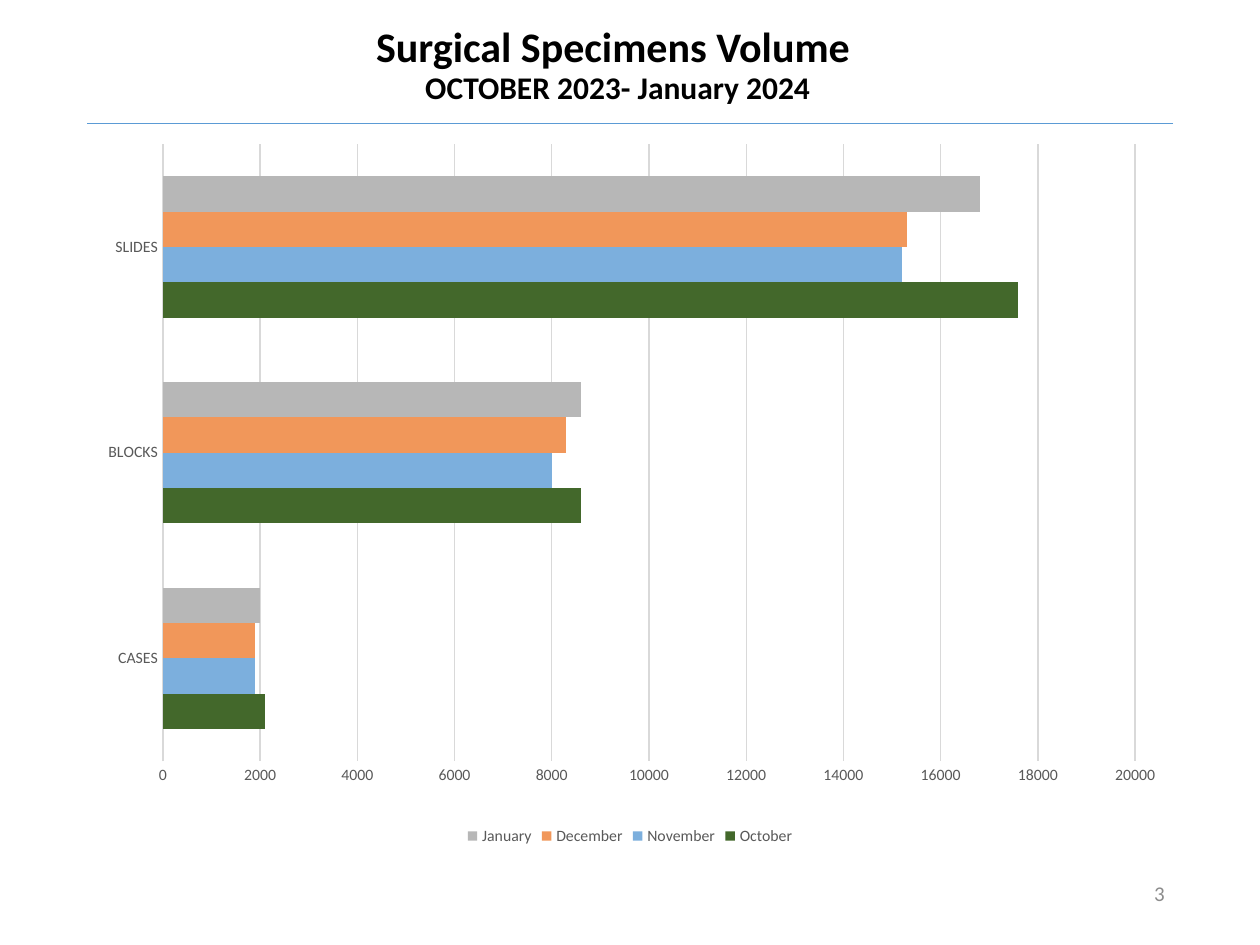
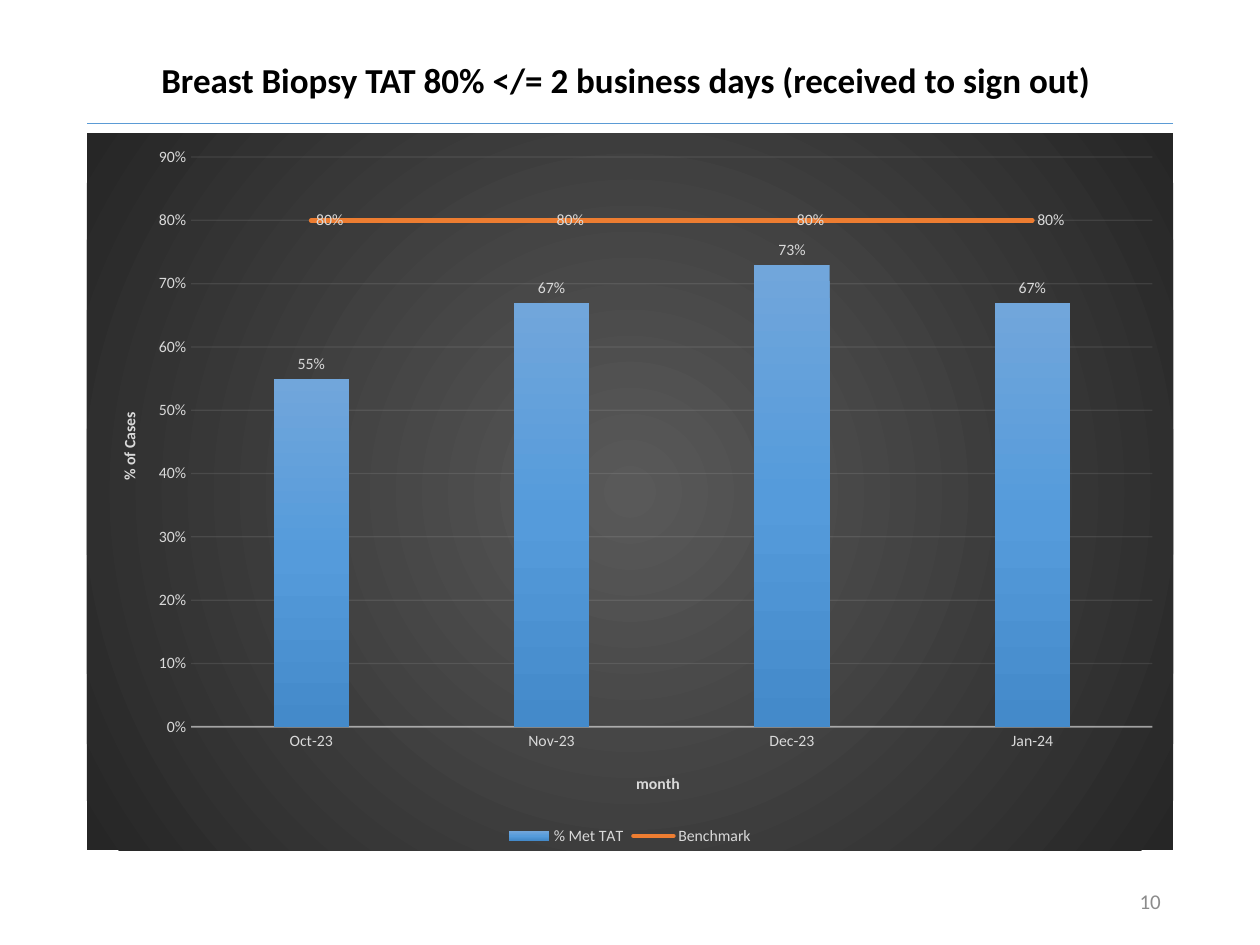
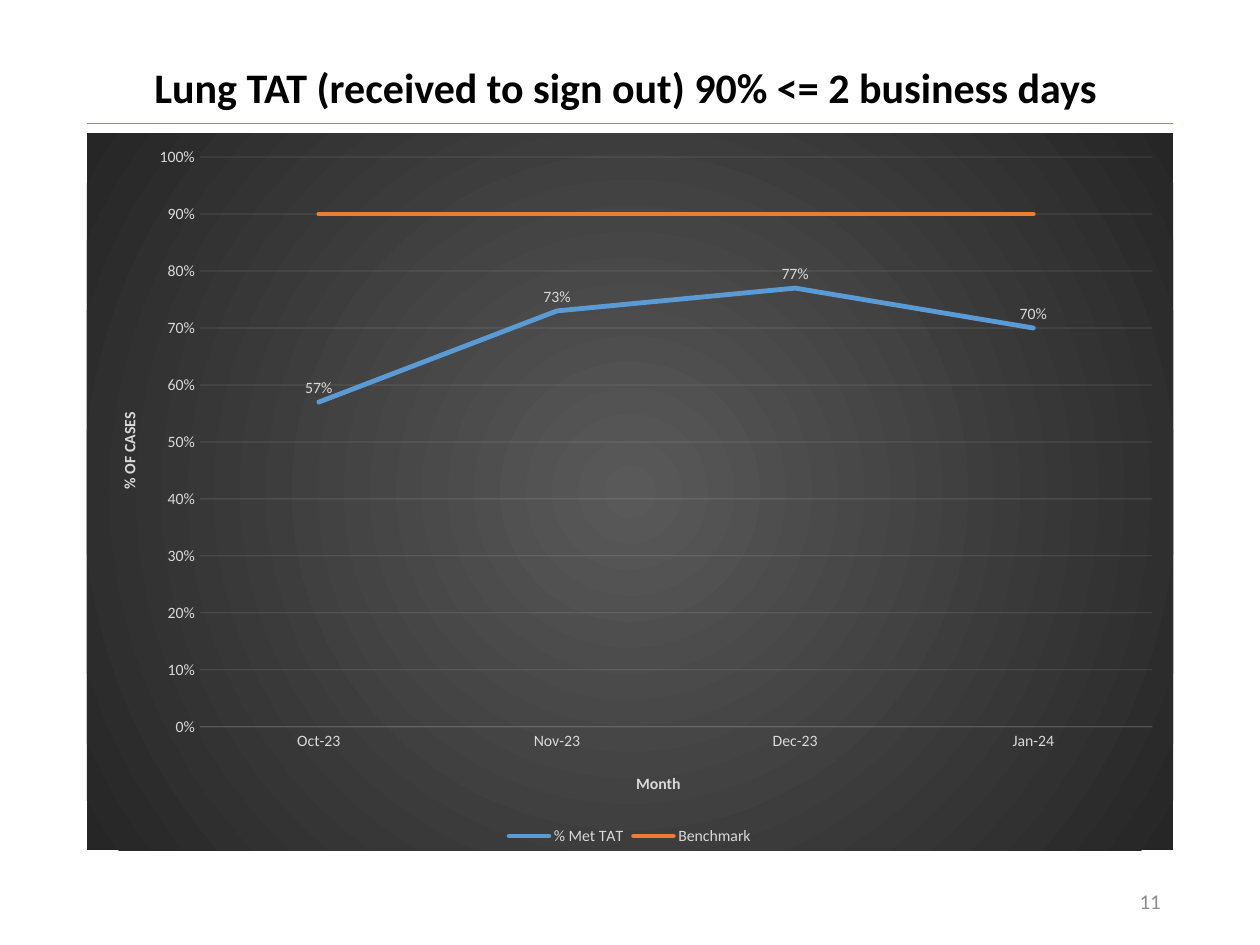
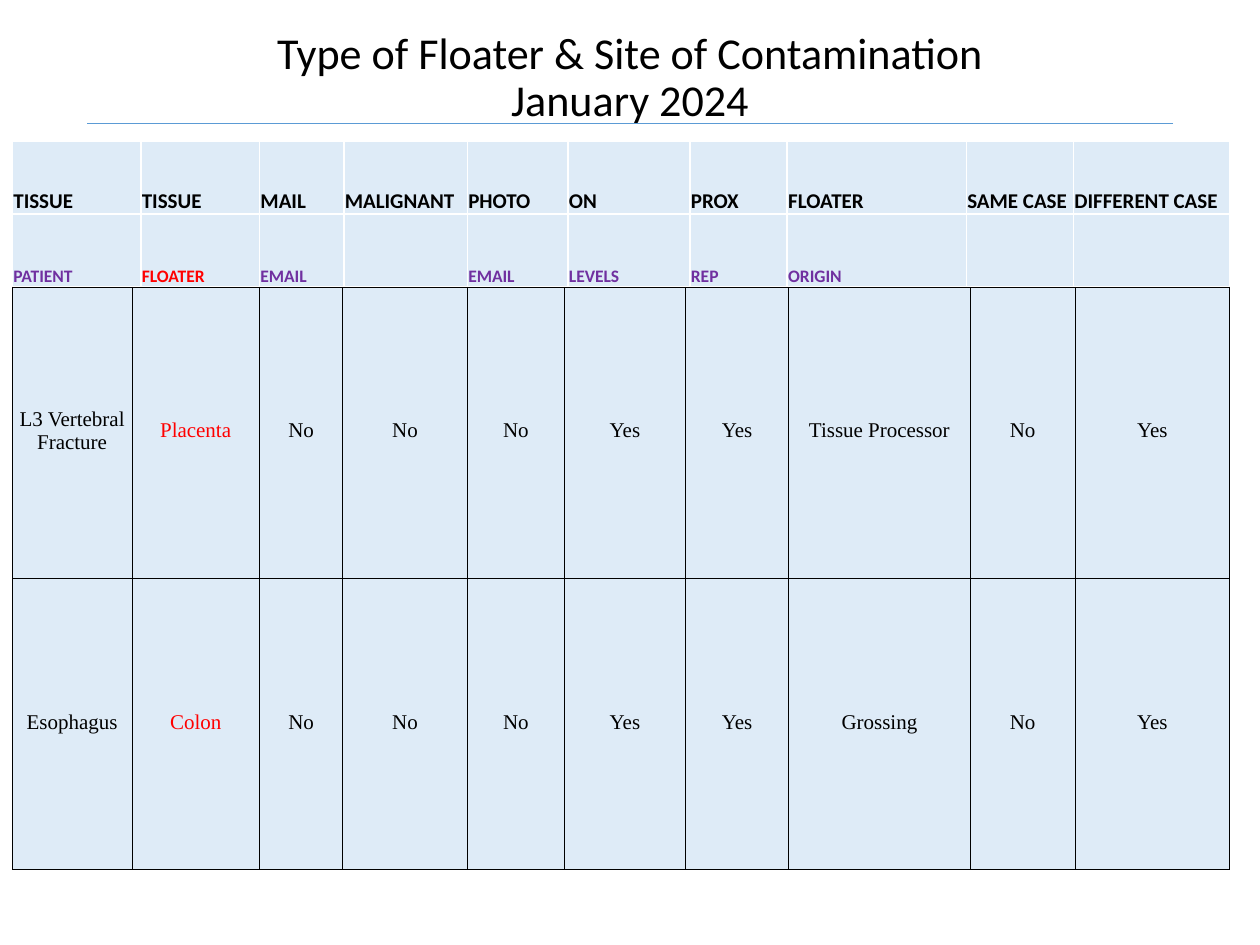
"""Build the pathology quality report: specimen volume, turnaround charts and floater log."""

import dataclasses
import typing

import lxml.etree
import pptx
import pptx.chart.axis
import pptx.chart.chart
import pptx.chart.data
import pptx.chart.series
import pptx.dml.chtfmt
import pptx.dml.color
import pptx.enum.chart
import pptx.enum.shapes
import pptx.enum.text
import pptx.oxml
import pptx.oxml.ns
import pptx.presentation
import pptx.slide
import pptx.table
import pptx.text.text
import pptx.util

Cm = pptx.util.Cm
Pt = pptx.util.Pt
RGBColor = pptx.dml.color.RGBColor
qn = pptx.oxml.ns.qn
ChartType = pptx.enum.chart.XL_CHART_TYPE
Align = pptx.enum.text.PP_ALIGN
Anchor = pptx.enum.text.MSO_ANCHOR

BODY_FONT = "Calibri"
LOG_FONT = "Times New Roman"
BLACK = RGBColor(0x00, 0x00, 0x00)
WHITE = RGBColor(0xFF, 0xFF, 0xFF)
RED = RGBColor(0xFF, 0x00, 0x00)
PURPLE = RGBColor(0x70, 0x30, 0xA0)
BLUE = RGBColor(0x5B, 0x9B, 0xD5)
ORANGE = RGBColor(0xED, 0x7D, 0x31)
PALE_BLUE = RGBColor(0xDE, 0xEB, 0xF7)
PAGE_GREY = RGBColor(0x8C, 0x8C, 0x8C)
TEXT_GREY = RGBColor(0x59, 0x59, 0x59)
LIGHT_GREY = RGBColor(0xD9, 0xD9, 0xD9)
NEAR_WHITE = RGBColor(0xF2, 0xF2, 0xF2)
DEEP_GREY = RGBColor(0x26, 0x26, 0x26)
BAR_TOP = RGBColor(0x71, 0xA6, 0xDB)
BAR_MIDDLE = RGBColor(0x55, 0x9B, 0xDB)
BAR_FOOT = RGBColor(0x44, 0x8A, 0xCA)
MONTH_COLOURS = (
    RGBColor(0x43, 0x68, 0x2B),
    RGBColor(0x7C, 0xAF, 0xDD),
    RGBColor(0xF1, 0x97, 0x5A),
    RGBColor(0xB7, 0xB7, 0xB7),
)

RULE_LEFT, RULE_RIGHT, RULE_TOP = Cm(1.75), Cm(23.65), Cm(2.49)
CHART_FRAME = (Cm(1.75), Cm(2.69), Cm(21.9), Cm(14.45))
PERCENT = "0%"
MONTHS = ("Oct-23", "Nov-23", "Dec-23", "Jan-24")
DARK_BACKDROP = ((0, TEXT_GREY), (100, DEEP_GREY))
CENTRE_OUT = (
    '<a:path path="circle"><a:fillToRect l="50000" t="50000" r="50000" b="50000"/></a:path>'
)
DOWNWARD = '<a:lin ang="5400000" scaled="0"/>'

Stops = tuple[tuple[int, RGBColor], ...]


class Frame(typing.NamedTuple):
    """Place and size of a box."""

    left: pptx.util.Length
    top: pptx.util.Length
    width: pptx.util.Length
    height: pptx.util.Length


@dataclasses.dataclass(frozen=True)
class Heading:
    """Title lines with their point sizes."""

    lines: tuple[tuple[str, float], ...]
    frame: Frame
    bold: bool = True
    align: Align = Align.CENTER


@dataclasses.dataclass(frozen=True)
class ChartLook:
    """Scale, colours and plot area of a chart."""

    top_value: float
    step: float
    text: RGBColor
    grid: RGBColor
    plot: tuple[float, float, float, float]
    grid_alpha: int = 100
    axis_line: tuple[float, int] = (0.75, 100)
    number_format: str = "General"
    dark: bool = False


@dataclasses.dataclass(frozen=True)
class Grid:
    """A table and the way its rows are set."""

    top: pptx.util.Length
    row_height: pptx.util.Length
    columns: tuple[float, ...]
    rows: tuple[tuple[str, ...], ...]
    row_styles: tuple[tuple[float, RGBColor, RGBColor], ...]
    border: tuple[RGBColor, float]
    font: str
    bold: bool
    align: Align
    anchor: Anchor
    foot_margin: pptx.util.Length


def set_font(font: pptx.text.text.Font, size: float, colour: RGBColor,
             bold: bool = False, name: str = BODY_FONT) -> None:
    """Set the usual font properties."""
    font.name, font.size, font.bold = name, Pt(size), bold
    font.color.rgb = colour


def drawing_xml(tag: str, content: str) -> lxml.etree._Element:
    """Make an element that may hold drawing and chart elements."""
    return pptx.oxml.parse_xml(f"<{tag} {pptx.oxml.ns.nsdecls('a', 'c')}>{content}</{tag}>")


def gradient(stops: Stops, direction: str) -> lxml.etree._Element:
    """Make a gradient fill."""
    marks = "".join(
        f'<a:gs pos="{position * 1000}"><a:srgbClr val="{colour}"/></a:gs>'
        for position, colour in stops
    )
    return drawing_xml("a:gradFill", f"<a:gsLst>{marks}</a:gsLst>{direction}")


def place(part: lxml.etree._Element, x: float, y: float,
          size: tuple[float, float] | None = None) -> None:
    """Give a chart part a fixed place, as fractions of the chart."""
    layout = part.find(qn("c:layout"))
    if layout is None:
        layout = drawing_xml("c:layout", "")
        part.insert(0, layout)
    settings = [("xMode", "edge"), ("yMode", "edge"), ("x", x), ("y", y)]
    if size:
        settings = [("layoutTarget", "inner"), *settings, ("w", size[0]), ("h", size[1])]
    content = "".join(f'<c:{key} val="{value}"/>' for key, value in settings)
    layout.append(drawing_xml("c:manualLayout", content))


def paint_line(look: pptx.dml.chtfmt.ChartFormat, colour: RGBColor, width: float,
               alpha: int = 100) -> None:
    """Draw the line of a chart part, with its opacity in percent."""
    look.line.color.rgb = colour
    look.line.width = Pt(width)
    if alpha < 100:
        shade = look.element.find(qn("c:spPr")).find(f".//{qn('a:srgbClr')}")
        shade.append(drawing_xml("a:alpha", ""))
        shade[-1].set("val", str(alpha * 1000))


def start_slide(deck: pptx.presentation.Presentation, heading: Heading) -> pptx.slide.Slide:
    """Add a slide with its title and the blue rule."""
    slide = deck.slides.add_slide(deck.slide_layouts[5])
    title = slide.shapes.title
    title.left, title.top, title.width, title.height = heading.frame
    frame = title.text_frame
    frame.auto_size = pptx.enum.text.MSO_AUTO_SIZE.NONE
    frame.vertical_anchor = Anchor.MIDDLE
    paragraph = frame.paragraphs[0]
    paragraph.alignment, paragraph.line_spacing = heading.align, 0.9
    main_size = heading.lines[0][1]
    set_font(paragraph.font, main_size, BLACK, heading.bold)
    for number, (words, size) in enumerate(heading.lines):
        if number:
            paragraph.add_line_break()
        run = paragraph.add_run()
        run.text = words
        if size != main_size:
            run.font.size = Pt(size)
    rule = slide.shapes.add_connector(
        pptx.enum.shapes.MSO_CONNECTOR.STRAIGHT, RULE_RIGHT, RULE_TOP, RULE_LEFT, RULE_TOP
    )
    rule.line.color.rgb, rule.line.width = BLUE, Pt(1)
    rule.element.spPr.append(drawing_xml("a:effectLst", ""))
    return slide


def add_page_number(slide: pptx.slide.Slide, number: str, left: float, top: float) -> None:
    """Write the page number at the lower right."""
    frame = slide.shapes.add_textbox(Cm(left), Cm(top), Cm(5.72), Cm(1.02)).text_frame
    frame.word_wrap, frame.vertical_anchor = True, Anchor.MIDDLE
    paragraph = frame.paragraphs[0]
    paragraph.text, paragraph.alignment = number, Align.RIGHT
    set_font(paragraph.font, 12, PAGE_GREY)


def add_chart(slide: pptx.slide.Slide, kind: ChartType, categories: tuple[str, ...],
              values: dict[str, tuple[float, ...]], look: ChartLook) -> pptx.chart.chart.Chart:
    """Add a chart with its axes, grid, legend and backdrop."""
    figures = pptx.chart.data.CategoryChartData(number_format=look.number_format)
    figures.categories = categories
    for name, numbers in values.items():
        figures.add_series(name, numbers)
    chart = slide.shapes.add_chart(kind, *CHART_FRAME, figures).chart
    set_font(chart.font, 10, BLACK)
    chart.has_title = False
    chart.has_legend = True
    chart.legend.position = pptx.enum.chart.XL_LEGEND_POSITION.BOTTOM
    chart.legend.include_in_layout = False
    set_font(chart.legend.font, 9, look.text)
    chart.plots[0].vary_by_categories = False

    scale = chart.value_axis
    scale.minimum_scale, scale.maximum_scale, scale.major_unit = 0, look.top_value, look.step
    scale.has_major_gridlines = True
    paint_line(scale.major_gridlines.format, look.grid, 0.75, look.grid_alpha)
    scale.format.line.fill.background()
    scale.tick_labels.number_format = look.number_format
    scale.tick_labels.number_format_is_linked = False
    paint_line(chart.category_axis.format, look.grid, *look.axis_line)
    for axis in (scale, chart.category_axis):
        axis.major_tick_mark = pptx.enum.chart.XL_TICK_MARK.NONE
        set_font(axis.tick_labels.font, 9, look.text)

    x, y, width, height = look.plot
    place(chart.element.chart.plotArea, x, y, (width, height))
    backdrop = drawing_xml("c:spPr", "<a:ln><a:noFill/></a:ln>")
    fill = gradient(DARK_BACKDROP, CENTRE_OUT) if look.dark else drawing_xml("a:noFill", "")
    backdrop.insert(0, fill)
    chart.element.chart.addnext(backdrop)
    return chart


def title_axis(axis: pptx.chart.axis._BaseAxis, words: str, x: float, y: float,
               upright: bool = False) -> None:
    """Name an axis."""
    frame = axis.axis_title.text_frame
    frame.text = words
    set_font(frame.paragraphs[0].font, 9, LIGHT_GREY, bold=True)
    place(axis.axis_title.element, x, y)
    if upright:
        body = axis.axis_title.element.find(f".//{qn('a:bodyPr')}")
        body.set("rot", "-5400000")
        body.set("vert", "horz")


def style_line(series: pptx.chart.series.LineSeries, colour: RGBColor) -> None:
    """Draw a series as a plain round-ended line."""
    paint_line(series.format, colour, 2.75)
    series.format.element.find(qn("c:spPr")).find(qn("a:ln")).set("cap", "rnd")
    series.marker.style = pptx.enum.chart.XL_MARKER_STYLE.NONE
    series.smooth = False


def label_values(series: pptx.chart.series.LineSeries | pptx.chart.series.BarSeries) -> None:
    """Show the percentages of a series."""
    labels = series.data_labels
    labels.show_value = True
    labels.number_format, labels.number_format_is_linked = PERCENT, False
    set_font(labels.font, 9, LIGHT_GREY)


def move_last_series_to_line(chart: pptx.chart.chart.Chart) -> None:
    """Turn the last column series into a line on the same axes."""
    columns = chart.element.chart.plotArea.find(qn("c:barChart"))
    benchmark = columns.findall(qn("c:ser"))[-1]
    for inversion in benchmark.findall(qn("c:invertIfNegative")):
        benchmark.remove(inversion)
    axes = "".join(
        f'<c:axId val="{axis.get("val")}"/>' for axis in columns.findall(qn("c:axId"))
    )
    lines = drawing_xml(
        "c:lineChart",
        f'<c:grouping val="standard"/><c:varyColors val="0"/><c:marker val="1"/>{axes}',
    )
    lines.insert(2, benchmark)
    columns.addnext(lines)


def border_cell(cell: pptx.table._Cell, colour: RGBColor, width: float) -> None:
    """Draw the four borders of a cell."""
    properties = cell._tc.get_or_add_tcPr()
    for position, side in enumerate("LRTB"):
        edge = drawing_xml(
            f"a:ln{side}", f'<a:solidFill><a:srgbClr val="{colour}"/></a:solidFill>'
        )
        edge.set("w", str(int(Pt(width))))
        properties.insert(position, edge)


def add_grid(slide: pptx.slide.Slide, grid: Grid) -> None:
    """Add a table, whose second column may have its own colour."""
    count = len(grid.rows)
    table = slide.shapes.add_table(
        count, len(grid.columns), Cm(0.25), grid.top,
        Cm(sum(grid.columns)), grid.row_height * count,
    ).table
    table.first_row = table.horz_banding = False
    for column, width in zip(table.columns, grid.columns):
        column.width = Cm(width)
    for row, entries, (size, colour, floater) in zip(table.rows, grid.rows, grid.row_styles):
        row.height = grid.row_height
        for position, (cell, words) in enumerate(zip(row.cells, entries)):
            cell.fill.solid()
            cell.fill.fore_color.rgb = PALE_BLUE
            border_cell(cell, *grid.border)
            cell.margin_left = cell.margin_right = cell.margin_top = Cm(0.02)
            cell.margin_bottom = grid.foot_margin
            cell.vertical_anchor = grid.anchor
            paragraph = cell.text_frame.paragraphs[0]
            paragraph.text, paragraph.alignment = words, grid.align
            shade = floater if position == 1 else colour
            set_font(paragraph.font, size, shade, grid.bold, grid.font)


VOLUME_LOOK = ChartLook(20000, 2000, TEXT_GREY, LIGHT_GREY, (0.07, 0.015, 0.895, 0.861))
BIOPSY_LOOK = ChartLook(0.9, 0.1, LIGHT_GREY, NEAR_WHITE, (0.096, 0.033, 0.885, 0.795),
                        10, (1, 54), PERCENT, True)
LUNG_LOOK = dataclasses.replace(BIOPSY_LOOK, top_value=1, axis_line=(0.75, 10),
                                plot=(0.104, 0.033, 0.877, 0.795))

FLOATER_HEADER = Grid(
    top=Cm(2.84), row_height=Cm(1.47),
    columns=(2.59, 2.39, 1.7, 2.49, 2.03, 2.46, 1.96, 3.61, 2.16, 3.15),
    rows=(
        ("TISSUE", "TISSUE", "MAIL", "MALIGNANT", "PHOTO", "ON", "PROX", "FLOATER",
         "SAME CASE", "DIFFERENT CASE"),
        ("PATIENT", "FLOATER", "EMAIL", "", "EMAIL", "LEVELS", "REP", "ORIGIN", "", ""),
    ),
    row_styles=((12, BLACK, BLACK), (10, PURPLE, RED)),
    border=(WHITE, 1), font=BODY_FONT, bold=True,
    align=Align.LEFT, anchor=Anchor.BOTTOM, foot_margin=Cm(0),
)
FLOATER_LOG = Grid(
    top=Cm(5.79), row_height=Cm(5.87),
    columns=(2.41, 2.57, 1.68, 2.51, 1.96, 2.44, 2.08, 3.66, 2.11, 3.12),
    rows=(
        ("L3 Vertebral Fracture", "Placenta", "No", "No", "No", "Yes", "Yes",
         "Tissue Processor", "No", "Yes"),
        ("Esophagus", "Colon", "No", "No", "No", "Yes", "Yes", "Grossing", "No", "Yes"),
    ),
    row_styles=((12, BLACK, RED),) * 2,
    border=(BLACK, 0.5), font=LOG_FONT, bold=False,
    align=Align.CENTER, anchor=Anchor.MIDDLE, foot_margin=Cm(0.1),
)


def build_volume(deck: pptx.presentation.Presentation) -> None:
    """Build the specimen volume slide."""
    slide = start_slide(deck, Heading(
        (("Surgical Specimens Volume ", 24), ("OCTOBER 2023- January 2024", 18)),
        Frame(Cm(1.19), Cm(-0.28), Cm(22.53), Cm(3.23)),
    ))
    add_page_number(slide, "3", 18.01, 17.5)
    chart = add_chart(slide, ChartType.BAR_CLUSTERED, ("CASES", "BLOCKS", "SLIDES"), {
        "October": (2100, 8600, 17600),
        "November": (1900, 8000, 15200),
        "December": (1900, 8300, 15300),
        "January": (2000, 8600, 16800),
    }, VOLUME_LOOK)
    chart.plots[0].gap_width = 182
    for month, colour in zip(chart.plots[0].series, MONTH_COLOURS):
        month.format.fill.solid()
        month.format.fill.fore_color.rgb = colour


def build_turnaround(deck: pptx.presentation.Presentation, heading: Heading, page: str,
                     kind: ChartType, met: tuple[float, ...], benchmark: float,
                     axis_names: tuple[str, str], look: ChartLook) -> pptx.chart.chart.Chart:
    """Build a turnaround slide and return its chart."""
    slide = start_slide(deck, heading)
    add_page_number(slide, page, 17.93, 17.65)
    chart = add_chart(slide, kind, MONTHS, {
        "% Met TAT": met,
        "Benchmark": (benchmark,) * len(MONTHS),
    }, look)
    title_axis(chart.category_axis, axis_names[0], 0.503, 0.888)
    title_axis(chart.value_axis, axis_names[1], 0.027, 0.385, upright=True)
    return chart


def build_biopsy(deck: pptx.presentation.Presentation) -> None:
    """Build the breast biopsy slide."""
    chart = build_turnaround(
        deck,
        Heading(
            (("Breast Biopsy TAT 80% </= 2 business days (received to sign out) ", 20),),
            Frame(Cm(1.75), Cm(1.02), Cm(21.9), Cm(1.27)),
        ),
        "10", ChartType.COLUMN_CLUSTERED, (0.55, 0.67, 0.73, 0.67), 0.8,
        ("month", "% of Cases"), BIOPSY_LOOK,
    )
    move_last_series_to_line(chart)
    columns, lines = chart.plots
    columns.gap_width, columns.overlap = 219, -27
    met, benchmark = columns.series[0], lines.series[0]
    met.format.element.get_or_add_spPr().insert(
        0, gradient(((0, BAR_TOP), (50, BAR_MIDDLE), (100, BAR_FOOT)), DOWNWARD)
    )
    style_line(benchmark, ORANGE)
    for series in (met, benchmark):
        label_values(series)


def build_lung(deck: pptx.presentation.Presentation) -> None:
    """Build the lung slide."""
    chart = build_turnaround(
        deck,
        Heading(
            (("Lung TAT (received to sign out) 90% <= 2 business days", 24),),
            Frame(Cm(2.86), Cm(1.17), Cm(21.9), Cm(1.27)), align=Align.LEFT,
        ),
        "11", ChartType.LINE, (0.57, 0.73, 0.77, 0.7), 0.9,
        ("Month", "% OF CASES"), LUNG_LOOK,
    )
    met, benchmark = chart.plots[0].series
    style_line(met, BLUE)
    style_line(benchmark, ORANGE)
    label_values(met)
    met.data_labels.position = pptx.enum.chart.XL_LABEL_POSITION.ABOVE


def build_floaters(deck: pptx.presentation.Presentation) -> None:
    """Build the floater slide."""
    slide = start_slide(deck, Heading(
        (("Type of Floater & Site of Contamination", 25.2), ("January 2024", 25.2)),
        Frame(Cm(1.75), Cm(0.64), Cm(21.9), Cm(1.9)), bold=False,
    ))
    for grid in (FLOATER_HEADER, FLOATER_LOG):
        add_grid(slide, grid)


def main() -> None:
    """Build and save the deck."""
    deck = pptx.Presentation()
    deck.slide_width, deck.slide_height = Cm(25.4), Cm(19.05)
    for build in (build_volume, build_biopsy, build_lung, build_floaters):
        build(deck)
    deck.save("out.pptx")


if __name__ == "__main__":
    main()
